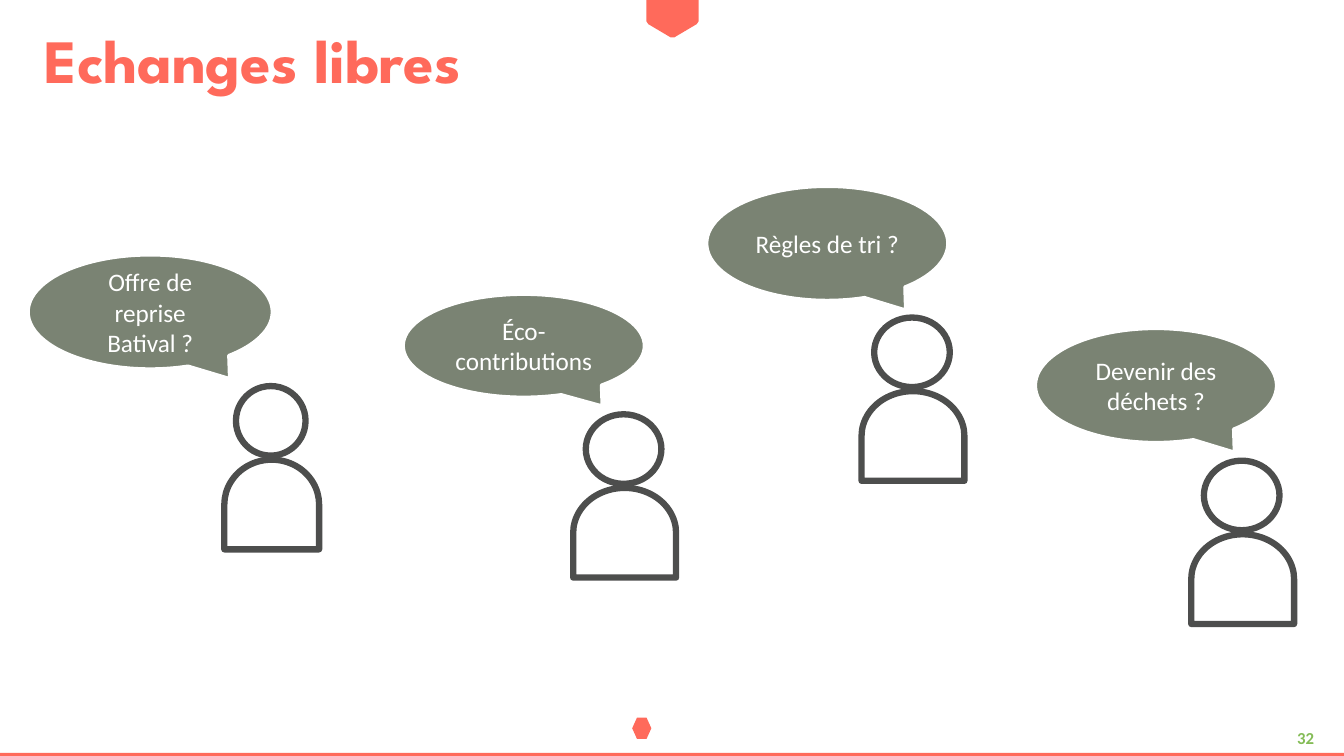
from pptx import Presentation
from pptx.dml.color import RGBColor
from pptx.enum.shapes import MSO_SHAPE
from pptx.enum.text import MSO_ANCHOR, MSO_AUTO_SIZE, PP_ALIGN
from pptx.util import Pt

PX = 9144
SLIDE_SIZE = (1333, 750)
RECTANGLE = MSO_SHAPE.RECTANGLE
HEXAGON = MSO_SHAPE.HEXAGON
HEAD = MSO_SHAPE.FLOWCHART_CONNECTOR
BODY = MSO_SHAPE.FLOWCHART_DELAY
CALLOUT = MSO_SHAPE.OVAL_CALLOUT
MIDDLE = MSO_ANCHOR.MIDDLE
LEFT, CENTER = PP_ALIGN.LEFT, PP_ALIGN.CENTER

COLORS = {
    "coral": "FF6A5B",
    "green": "84BC56",
    "sage": "7A8373",
    "gray": "4D4E4D",
    "white": "FFFFFF",
}
FORMATS = {
    "title": {"name": "League Spartan", "size": Pt(44), "bold": True},
    "number": {"name": "Calibri", "size": Pt(12), "bold": True},
    "question": {"name": "Calibri", "size": Pt(18), "bold": False},
}

TITLE = "Echanges libres"
TITLE_BOX = (34, 33, 1249, 61)
PAGE_NUMBER = "32"
NUMBER_BOX = (1260, 715, 70, 33)
FOOTER_BAR = (0, 747, 1333, 3)
EMBLEM_BOX = (627, 712, 19, 21)
RIBBON = [(641, 0), (693, 0), (693, 21), (691, 24),
          (669, 37), (665, 37), (643, 24), (641, 21)]

HEAD_HEIGHT = 69
BODY_HEIGHT = 89
NECK_GAP = 4
BODY_SHIFT = 1
CALLOUT_TIP = (0.325, 0.585)
PEOPLE = [
    {"question": "Éco-contributions", "callout": (400, 292, 239, 102),
     "head": (581, 411), "head_width": 75, "shoulders": 102},
    {"question": "Offre de reprise Batival ?", "callout": (28, 253, 242, 113),
     "head": (234, 383), "head_width": 69, "shoulders": 94},
    {"question": "Règles de tri ?", "callout": (701, 185, 239, 113),
     "head": (867, 315), "head_width": 75, "shoulders": 102},
    {"question": "Devenir des déchets ?", "callout": (1027, 326, 239, 113),
     "head": (1194, 457), "head_width": 75, "shoulders": 102},
]


def emu(values):
    return [round(value * PX) for value in values]


def color(name):
    return RGBColor.from_string(COLORS[name])


def paint(shape, fill, line=None, width=0):
    shape.shadow.inherit = False
    shape.fill.solid()
    shape.fill.fore_color.rgb = color(fill)
    if line:
        shape.line.color.rgb = color(line)
        shape.line.width = Pt(width)
    else:
        shape.line.fill.background()


def add_preset(shapes, preset, box, *style):
    shape = shapes.add_shape(preset, *emu(box))
    paint(shape, *style)
    return shape


def write(shape, text, style, font_color, alignment):
    frame = shape.text_frame
    frame.word_wrap = True
    frame.auto_size = MSO_AUTO_SIZE.NONE
    frame.vertical_anchor = MIDDLE
    paragraph = frame.paragraphs[0]
    paragraph.alignment = alignment
    run = paragraph.add_run()
    run.text = text
    for attribute, value in FORMATS[style].items():
        setattr(run.font, attribute, value)
    run.font.color.rgb = color(font_color)
    return paragraph


def add_person(slide, person):
    shapes = slide.shapes.add_group_shape().shapes
    head_left, head_top = person["head"]
    head_width, shoulders = person["head_width"], person["shoulders"]
    center_x = head_left + head_width / 2 + BODY_SHIFT
    center_y = head_top + HEAD_HEIGHT + NECK_GAP + BODY_HEIGHT / 2
    body_box = (center_x - BODY_HEIGHT / 2, center_y - shoulders / 2,
                BODY_HEIGHT, shoulders)
    body = add_preset(shapes, BODY, body_box, "white", "gray", 4.5)
    body.rotation = 270
    head_box = (head_left, head_top, head_width, HEAD_HEIGHT)
    add_preset(shapes, HEAD, head_box, "white", "gray", 4.5)
    callout = add_preset(shapes, CALLOUT, person["callout"], "sage", "white", 2.25)
    for index, value in enumerate(CALLOUT_TIP):
        callout.adjustments[index] = value
    write(callout, person["question"], "question", "white", CENTER)


def main():
    presentation = Presentation()
    presentation.slide_width, presentation.slide_height = emu(SLIDE_SIZE)
    slide = presentation.slides.add_slide(presentation.slide_layouts[5])

    add_preset(slide.shapes, HEXAGON, EMBLEM_BOX, "coral")
    add_preset(slide.shapes, RECTANGLE, FOOTER_BAR, "coral")
    builder = slide.shapes.build_freeform(*RIBBON[0], scale=PX)
    builder.add_line_segments(RIBBON[1:], close=True)
    paint(builder.convert_to_shape(), "coral")

    title = slide.shapes.title
    title.left, title.top, title.width, title.height = emu(TITLE_BOX)
    write(title, TITLE, "title", "coral", LEFT).line_spacing = 0.9
    number = slide.shapes.add_textbox(*emu(NUMBER_BOX))
    write(number, PAGE_NUMBER, "number", "green", CENTER)

    for person in PEOPLE:
        add_person(slide, person)
    presentation.save("out.pptx")


if __name__ == "__main__":
    main()
